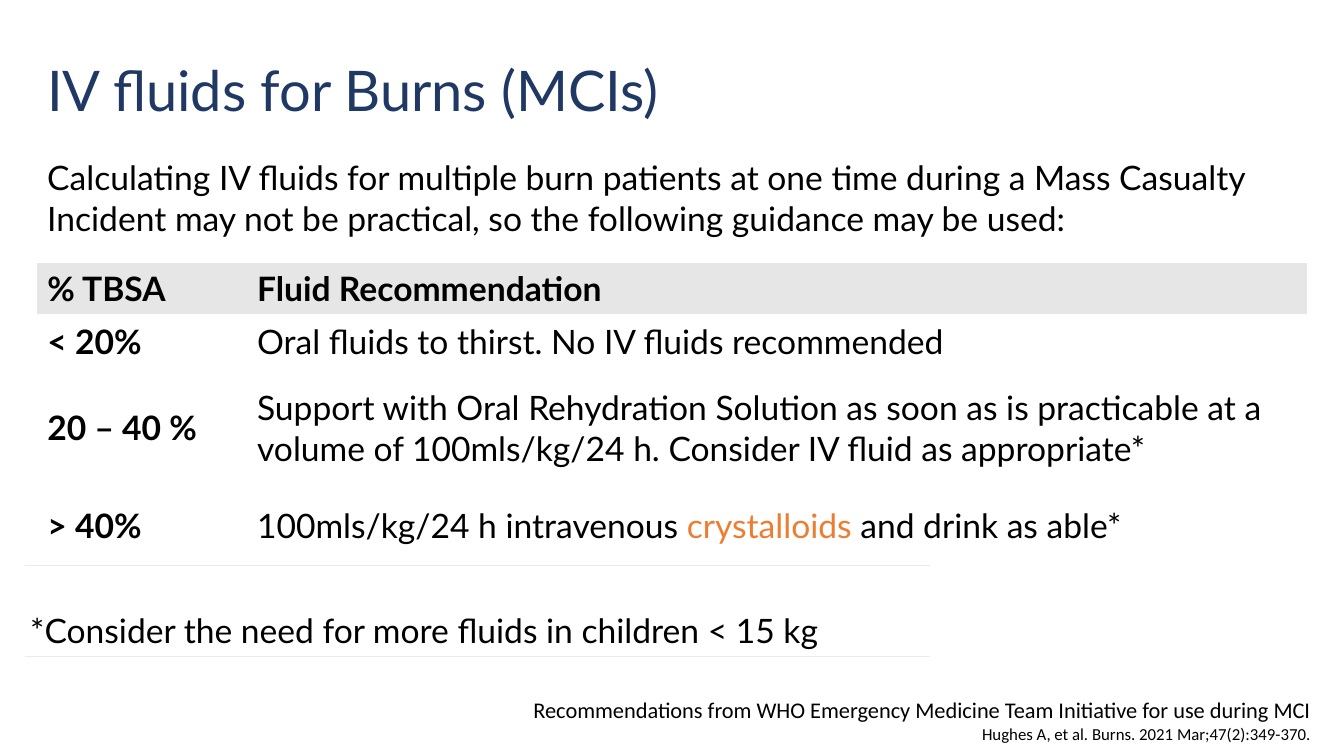
import pptx
import pptx.dml.color
import pptx.enum.text
import pptx.oxml
import pptx.oxml.ns
import pptx.util

Inches = pptx.util.Inches
Pt = pptx.util.Pt
ALIGN = pptx.enum.text.PP_ALIGN
ANCHOR = pptx.enum.text.MSO_ANCHOR

COLORS = {
    "title": "203864",
    "text": "000000",
    "accent": "ED7D31",
    "header": "E7E6E6",
    "rule": "EBEBEB",
}
PLAIN_TABLE_STYLE = "{2D5ABB26-0587-4C30-8999-92F81FD0307C}"

GUIDANCE = [
    ("% TBSA", "Fluid Recommendation"),
    ("< 20%", "Oral fluids to thirst. No IV fluids recommended"),
    ("20 – 40 %", "Support with Oral Rehydration Solution as soon as is practicable at a "
                  "volume of 100mls/kg/24 h. Consider IV fluid as appropriate*"),
    ("> 40%", "100mls/kg/24 h intravenous crystalloids and drink as able*"),
]
HIGHLIGHT = "crystalloids"


def write_text(paragraph, text, size=24, font="Lato", color="text", bold=False, align=ALIGN.LEFT):
    """Append one formatted run to a paragraph."""
    paragraph.alignment = align
    run = paragraph.add_run()
    run.text = text
    run.font.size = Pt(size)
    run.font.name = font
    run.font.bold = bold
    run.font.color.rgb = pptx.dml.color.RGBColor.from_string(COLORS[color])


def add_text_frame(slide, box, anchor=ANCHOR.TOP):
    """Add a wrapping text box and return its text frame."""
    text_frame = slide.shapes.add_textbox(*map(Inches, box)).text_frame
    text_frame.word_wrap = True
    text_frame.vertical_anchor = anchor
    return text_frame


def add_plain_table(slide, box, row_heights, column_widths):
    """Add a table without banding, fills or grid."""
    table = slide.shapes.add_table(len(row_heights), len(column_widths), *map(Inches, box)).table
    table.first_row = table.horz_banding = False
    table._tbl.tblPr.find(pptx.oxml.ns.qn("a:tableStyleId")).text = PLAIN_TABLE_STYLE
    for row, height in zip(table.rows, row_heights):
        row.height = Inches(height)
    for column, width in zip(table.columns, column_widths):
        column.width = Inches(width)
    for cell in table.iter_cells():
        cell.fill.background()
        cell.vertical_anchor = ANCHOR.MIDDLE
    return table


def add_heading(slide, box):
    """Write the slide title."""
    text_frame = add_text_frame(slide, box, ANCHOR.MIDDLE)
    write_text(text_frame.paragraphs[0], "IV fluids for Burns (MCIs)", size=40, color="title")


def add_introduction(slide, box):
    """Write the sentence that introduces the guidance."""
    write_text(
        add_text_frame(slide, box).paragraphs[0],
        "Calculating IV fluids for multiple burn patients at one time during a Mass Casualty "
        "Incident may not be practical, so the following guidance may be used:",
    )


def add_guidance(slide, box):
    """Build the table of fluid recommendations by burned area."""
    label_width = 2.08
    table = add_plain_table(slide, box, [0.5, 0.56, 1.15, 0.78], [label_width, box[2] - label_width])
    for row_index, row in enumerate(GUIDANCE):
        for column_index, text in enumerate(row):
            cell = table.cell(row_index, column_index)
            paragraph = cell.text_frame.paragraphs[0]
            bold = row_index == 0 or column_index == 0
            before, highlight, after = text.partition(HIGHLIGHT)
            for part, color in ((before, "text"), (highlight, "accent"), (after, "text")):
                if part:
                    write_text(paragraph, part, color=color, bold=bold)
            if row_index == 0:
                cell.fill.solid()
                cell.fill.fore_color.rgb = pptx.dml.color.RGBColor.from_string(COLORS["header"])


def add_footnote(slide, box):
    """Build the footnote row with a rule above and below."""
    cell = add_plain_table(slide, box, [box[3]], [box[2]]).cell(0, 0)
    cell.vertical_anchor = ANCHOR.BOTTOM
    cell.margin_left = cell.margin_right = Inches(0.05)
    write_text(cell.text_frame.paragraphs[0], "*Consider the need for more fluids in children < 15 kg")
    for position, edge in enumerate(("lnT", "lnB")):
        line = pptx.oxml.parse_xml(
            f'<a:{edge} {pptx.oxml.ns.nsdecls("a")} w="{Pt(0.75)}"><a:solidFill>'
            f'<a:srgbClr val="{COLORS["rule"]}"/></a:solidFill></a:{edge}>'
        )
        cell._tc.get_or_add_tcPr().insert(position, line)


def add_source(slide, box):
    """Write the right-aligned source lines."""
    text_frame = add_text_frame(slide, box)
    write_text(
        text_frame.paragraphs[0],
        "Recommendations from WHO Emergency Medicine Team Initiative for use during MCI",
        size=16, font="Calibri", align=ALIGN.RIGHT,
    )
    write_text(
        text_frame.add_paragraph(),
        "Hughes A, et al. Burns. 2021 Mar;47(2):349-370.",
        size=12, font="Calibri", align=ALIGN.RIGHT,
    )


def main():
    """Build the slide and save it."""
    presentation = pptx.Presentation()
    presentation.slide_width = Inches(13.33)
    presentation.slide_height = Inches(7.5)
    slide = presentation.slides.add_slide(presentation.slide_layouts[6])
    left, width = 0.37, 12.59
    add_heading(slide, (left, 0.16, 11.5, 1.45))
    add_introduction(slide, (left, 1.51, width, 0.91))
    add_guidance(slide, (left, 2.61, width, 2.99))
    add_footnote(slide, (0.25, 5.61, 8.97, 0.9))
    add_source(slide, (5.09, 6.86, 8.01, 0.57))
    presentation.save("out.pptx")


if __name__ == "__main__":
    main()
